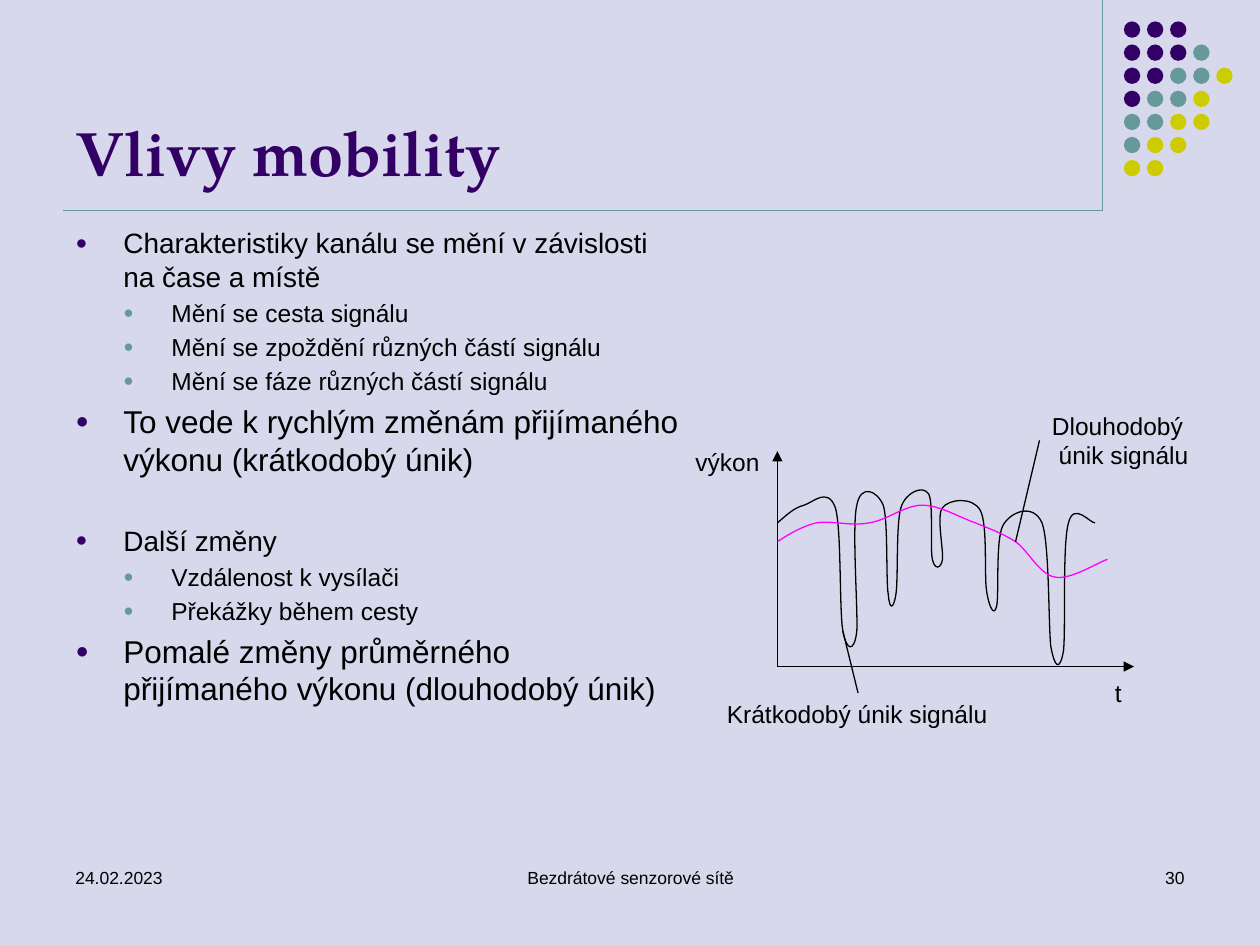
from lxml import etree
from pptx import Presentation
from pptx.dml.color import RGBColor
from pptx.enum.shapes import MSO_CONNECTOR, MSO_SHAPE
from pptx.enum.text import MSO_ANCHOR, MSO_AUTO_SIZE, PP_ALIGN
from pptx.oxml.ns import qn
from pptx.util import Inches, Pt

COLORS = {"background": "D8D8EC", "purple": "330066", "teal": "669999",
          "yellow": "CCCC00", "black": "000000", "magenta": "FF00FF"}
BODY_FONT, TITLE_FONT = "Arial", "TeX Gyre Pagella"

TITLE = "Vlivy mobility"
# level, size, space before, text
BULLETS = [
    (0, 16, 0, "Charakteristiky kanálu se mění v závislosti na čase a místě"),
    (1, 14, 2.8, "Mění se cesta signálu"),
    (1, 14, 2.8, "Mění se zpoždění různých částí signálu"),
    (1, 14, 2.8, "Mění se fáze různých částí signálu"),
    (0, 18, 3.6, "To vede k rychlým změnám přijímaného výkonu (krátkodobý únik)"),
    (0, 16, 26, "Další změny"),
    (1, 14, 2.8, "Vzdálenost k vysílači"),
    (1, 14, 2.8, "Překážky během cesty"),
    (0, 18, 3.6, "Pomalé změny průměrného přijímaného výkonu (dlouhodobý únik)"),
]
BULLET_COLORS = ["purple", "teal"]
FOOTER = [
    ("24.02.2023", 0.5, 2.33, PP_ALIGN.LEFT),
    ("Bezdrátové senzorové sítě", 3.42, 3.17, PP_ALIGN.CENTER),
    ("30", 7.17, 2.33, PP_ALIGN.RIGHT),
]
DOT_ROWS = ["PPP", "PPPT", "PPTTY", "PTTY", "TTYY", "TYY", "YY"]
DOT_COLORS = {"P": "purple", "T": "teal", "Y": "yellow"}

# Each curve: a start point, then two control points and an end point per piece
SHORT_FADING = [
    (6.17, 4.15),
    (6.24, 4.09), (6.3, 4.03), (6.38, 4.01), (6.45, 3.99), (6.57, 3.86), (6.63, 4.03),
    (6.68, 4.2), (6.66, 4.85), (6.69, 5.01), (6.72, 5.17), (6.78, 5.18), (6.8, 5.01),
    (6.81, 4.84), (6.76, 4.18), (6.8, 4.01), (6.83, 3.84), (6.96, 3.89), (7.01, 4.01),
    (7.05, 4.13), (7.03, 4.61), (7.05, 4.72), (7.06, 4.84), (7.09, 4.84), (7.11, 4.72),
    (7.13, 4.61), (7.11, 4.16), (7.15, 4.03), (7.19, 3.9), (7.33, 3.85), (7.37, 3.92),
    (7.41, 3.99), (7.38, 4.35), (7.4, 4.44), (7.42, 4.53), (7.47, 4.51), (7.48, 4.44),
    (7.49, 4.37), (7.43, 4.09), (7.48, 4.03), (7.53, 3.96), (7.72, 3.94), (7.78, 4.05),
    (7.84, 4.16), (7.81, 4.56), (7.83, 4.69), (7.85, 4.82), (7.89, 4.9), (7.91, 4.81),
    (7.93, 4.73), (7.9, 4.28), (7.96, 4.17), (8.02, 4.06), (8.2, 3.99), (8.27, 4.15),
    (8.33, 4.31), (8.32, 4.96), (8.34, 5.13), (8.37, 5.3), (8.41, 5.33), (8.44, 5.17),
    (8.46, 5.01), (8.43, 4.32), (8.48, 4.15), (8.52, 3.98), (8.65, 4.15), (8.69, 4.15),
]
LONG_FADING = [
    (6.17, 4.3),
    (6.26, 4.24), (6.36, 4.18), (6.48, 4.15), (6.6, 4.13), (6.76, 4.18), (6.9, 4.15),
    (7.04, 4.13), (7.18, 4.01), (7.32, 4.01), (7.46, 4.01), (7.62, 4.11), (7.74, 4.15),
    (7.86, 4.2), (7.95, 4.23), (8.06, 4.3), (8.16, 4.37), (8.25, 4.56), (8.37, 4.58),
    (8.49, 4.61), (8.72, 4.46), (8.79, 4.44),
]
AXIS_ORIGIN = (6.17, 5.29)
AXIS_ENDS = [(9, 5.29), (6.17, 3.58)]


def rgb(name):
    return RGBColor.from_string(COLORS[name])


def place(shape, left, top, width, height):
    shape.left, shape.top = Inches(left), Inches(top)
    shape.width, shape.height = Inches(width), Inches(height)


def set_font(paragraph, size, name=BODY_FONT, color="black", bold=False):
    font = paragraph.font
    font.size, font.name, font.bold = Pt(size), name, bold
    font.color.rgb = rgb(color)


def add_label(page, lines, left, top, width, height, size=14,
              align=PP_ALIGN.LEFT, wrap=False):
    box = page.shapes.add_textbox(Inches(left), Inches(top), Inches(width), Inches(height))
    frame = box.text_frame
    frame.word_wrap = wrap
    frame.text = "\n".join(lines)
    for paragraph in frame.paragraphs:
        paragraph.alignment = align
        set_font(paragraph, size)
    return box


def add_line(page, start, end, color="black", arrow=False):
    line = page.shapes.add_connector(
        MSO_CONNECTOR.STRAIGHT, *(Inches(value) for value in (*start, *end)))
    line.line.color.rgb = rgb(color)
    line.line.width = Pt(0.75)
    properties = line._element.spPr
    if arrow:
        etree.SubElement(properties.find(qn("a:ln")), qn("a:tailEnd"), type="triangle")
    etree.SubElement(properties, qn("a:effectLst"))
    return line


def add_curve(page, points, color):
    """Draw a freeform, turning each three line segments into one Bézier piece."""
    points = [(Inches(x), Inches(y)) for x, y in points]
    builder = page.shapes.build_freeform(*points[0])
    builder.add_line_segments(points[1:], close=False)
    curve = builder.convert_to_shape()
    curve.shadow.inherit = False
    curve.fill.background()
    curve.line.color.rgb = rgb(color)
    curve.line.width = Pt(0.75)
    outline = curve._element.spPr.find(".//" + qn("a:path"))
    segments = outline.findall(qn("a:lnTo"))
    for first in range(0, len(segments), 3):
        piece = etree.SubElement(outline, qn("a:cubicBezTo"))
        for segment in segments[first:first + 3]:
            piece.append(segment[0])
            outline.remove(segment)


def add_bullet(paragraph, level):
    properties = paragraph._p.get_or_add_pPr()
    properties.set("marL", str(Inches(0.38 * (level + 1))))
    properties.set("indent", str(Inches(-0.38)))
    color = etree.SubElement(properties, qn("a:buClr"))
    etree.SubElement(color, qn("a:srgbClr"), val=COLORS[BULLET_COLORS[level]])
    etree.SubElement(properties, qn("a:buSzPct"), val="70000")
    etree.SubElement(properties, qn("a:buFont"), typeface=BODY_FONT)
    etree.SubElement(properties, qn("a:buChar"), char="●")


def add_decoration(page):
    corner = (8.75, 1.67)
    add_line(page, (8.75, 0), corner, "teal")
    add_line(page, (0.5, 1.67), corner, "teal")
    pitch, diameter = 0.55 / 3, Inches(0.13)
    for row, codes in enumerate(DOT_ROWS):
        for column, code in enumerate(codes):
            dot = page.shapes.add_shape(
                MSO_SHAPE.OVAL, Inches(8.92 + column * pitch),
                Inches(0.17 + row * pitch), diameter, diameter)
            dot.shadow.inherit = False
            dot.fill.solid()
            dot.fill.fore_color.rgb = rgb(DOT_COLORS[code])
            dot.line.fill.background()


def fill_placeholders(page):
    title, body = page.shapes.title, page.placeholders[1]
    place(title, 0.5, 0.13, 8.25, 1.42)
    title.text_frame.text = TITLE
    title.text_frame.vertical_anchor = MSO_ANCHOR.BOTTOM
    title.text_frame.auto_size = MSO_AUTO_SIZE.NONE
    heading = title.text_frame.paragraphs[0]
    heading.alignment = PP_ALIGN.LEFT
    set_font(heading, 36, TITLE_FONT, "purple", True)

    place(body, 0.5, 1.74, 5.01, 4.82)
    frame = body.text_frame
    frame.auto_size = MSO_AUTO_SIZE.NONE
    frame.text = "\n".join(text for *_, text in BULLETS)
    for paragraph, (level, size, space, _) in zip(frame.paragraphs, BULLETS):
        paragraph.level = level
        add_bullet(paragraph, level)
        paragraph.space_before = Pt(space)
        set_font(paragraph, size)


def add_diagram(page):
    for end in AXIS_ENDS:
        add_line(page, AXIS_ORIGIN, end, arrow=True)
    add_curve(page, SHORT_FADING, "black")
    add_curve(page, LONG_FADING, "magenta")
    short_label = add_label(page, ["Krátkodobý únik signálu"], 5.67, 5.5, 2.28, 0.34)
    long_label = add_label(page, ["Dlouhodobý", " únik signálu"],
                           8.25, 3.21, 1.31, 0.57, wrap=True)
    add_line(page, (8.25, 3.5), (8.06, 4.3)).begin_connect(long_label, 1)
    add_line(page, (6.81, 5.5), (6.69, 5.01)).begin_connect(short_label, 0)
    add_label(page, ["t"], 8.75, 5.33, 0.26, 0.33)
    add_label(page, ["výkon"], 5.42, 3.5, 0.71, 0.34)


def main():
    deck = Presentation()
    deck.slide_width, deck.slide_height = Inches(10), Inches(7.5)
    page = deck.slides.add_slide(deck.slide_layouts[1])
    page.background.fill.solid()
    page.background.fill.fore_color.rgb = rgb("background")
    add_decoration(page)
    fill_placeholders(page)
    add_diagram(page)
    for text, left, width, align in FOOTER:
        add_label(page, [text], left, 6.83, width, 0.5, 10, align, wrap=True)
    deck.save("out.pptx")


if __name__ == "__main__":
    main()
